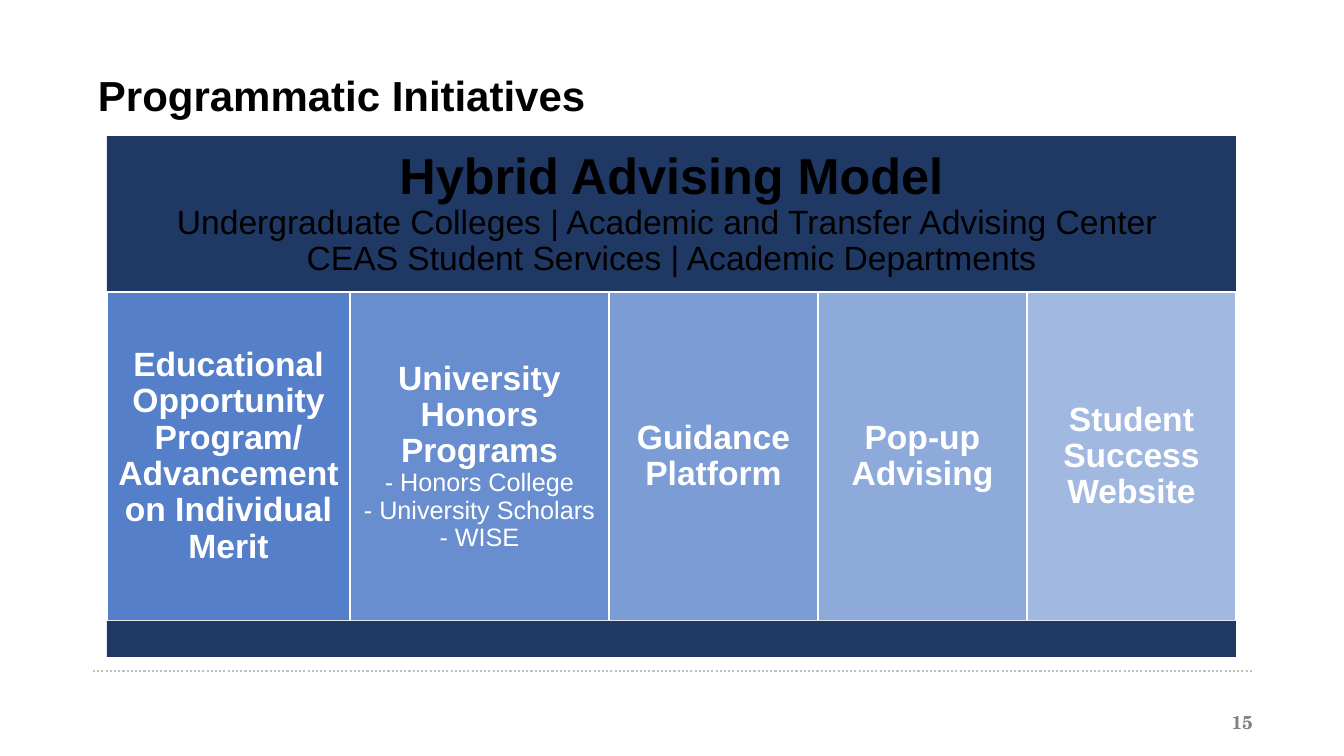
from pptx import Presentation
from pptx.dml.color import RGBColor
from pptx.enum.dml import MSO_LINE
from pptx.enum.shapes import MSO_CONNECTOR, MSO_SHAPE
from pptx.enum.text import MSO_ANCHOR, PP_ALIGN
from pptx.oxml.ns import qn
from pptx.util import Emu, Pt
from lxml.etree import SubElement

NAVY = RGBColor(0x20, 0x38, 0x64)
BLUE = RGBColor(0x44, 0x72, 0xC4)
WHITE = RGBColor(0xFF, 0xFF, 0xFF)
BLACK = RGBColor(0x00, 0x00, 0x00)
GRAY = RGBColor(0x82, 0x83, 0x83)
SILVER = RGBColor(0xC0, 0xC0, 0xC0)

HEADER = [
    ("Hybrid Advising Model", 36, True),
    ("Undergraduate Colleges | Academic and Transfer Advising Center ", 24, False),
    ("CEAS Student Services | Academic Departments", 24, False),
]
COLUMNS = [
    (243, [("Educational Opportunity Program/", 24, True),
           ("Advancement on Individual Merit", 24, True)]),
    (259, [("University Honors Programs", 24, True),
           ("- Honors College", 18, False),
           ("- University Scholars", 18, False),
           ("- WISE", 18, False)]),
    (209, [("Guidance Platform", 24, True)]),
    (209, [("Pop-up Advising", 24, True)]),
    (209, [("Student Success Website", 24, True)]),
]


def px(n):
    return Emu(round(n * 914400 / 100.8))


def write(sp, lines, color=WHITE, font="Arial", align=PP_ALIGN.CENTER,
          anchor=MSO_ANCHOR.MIDDLE, spacing=0.9, inset=(10, 10)):
    tf = sp.text_frame
    tf.word_wrap = True
    tf.vertical_anchor = anchor
    tf.margin_left = tf.margin_right = px(inset[0])
    tf.margin_top = tf.margin_bottom = px(inset[1])
    p = tf.paragraphs[0]
    p.alignment = align
    p.line_spacing = spacing
    for i, (text, size, bold) in enumerate(lines):
        if i:
            p.add_line_break()
        r = p.add_run()
        r.text = text
        r.font.name = font
        r.font.size = Pt(size)
        r.font.bold = bold
        r.font.color.rgb = color


def text_box(s, box, lines, **fmt):
    write(s.shapes.add_textbox(*map(px, box)), lines, **fmt)


def block(s, box, fill, alpha=None, border=None):
    sp = s.shapes.add_shape(MSO_SHAPE.RECTANGLE, *map(px, box))
    sp.shadow.inherit = False
    sp.fill.solid()
    sp.fill.fore_color.rgb = fill
    if alpha:
        clr = sp.fill._xPr.find(qn("a:solidFill"))[0]
        SubElement(clr, qn("a:alpha"), val=str(alpha * 1000))
    if border:
        sp.line.color.rgb = border
        sp.line.width = Pt(1)
    else:
        sp.line.fill.background()
    return sp


def advising_model(s, x, y, header_h, column_h, base_h):
    w = sum(width for width, _ in COLUMNS)
    header = block(s, (x, y, w, header_h), NAVY)
    write(header, HEADER, color=BLACK, inset=(15, 15))
    top = y + header_h
    left = x
    for i, (width, lines) in enumerate(COLUMNS):
        column = block(s, (left, top, width, column_h), BLUE, 90 - 10 * i, WHITE)
        write(column, lines)
        left += width
    block(s, (x, top + column_h, w, base_h), NAVY)


def footer(s, x, y, w):
    rule = s.shapes.add_connector(MSO_CONNECTOR.STRAIGHT, px(x), px(y), px(x + w), px(y))
    rule.line.color.rgb = SILVER
    rule.line.width = Pt(1.5)
    rule.line.dash_style = MSO_LINE.ROUND_DOT
    SubElement(rule._element.spPr, qn("a:effectLst"))
    text_box(s, (x + w - 288, y + 31, 302, 40), [("15", 13.3, True)], color=GRAY,
             font="TeX Gyre Schola", align=PP_ALIGN.RIGHT, spacing=1.0, inset=(13, 7))


def main():
    prs = Presentation()
    prs.slide_width, prs.slide_height = px(1344), px(756)
    s = prs.slides.add_slide(prs.slide_layouts[6])
    footer(s, 93, 671, 1159)
    text_box(s, (88, 74, 1174, 91), [("Programmatic Initiatives", 30, True)], color=BLACK,
             align=PP_ALIGN.LEFT, anchor=MSO_ANCHOR.TOP, spacing=0.8, inset=(10, 5))
    advising_model(s, 107, 136, 156, 329, 36)
    prs.save("out.pptx")


if __name__ == "__main__":
    main()
